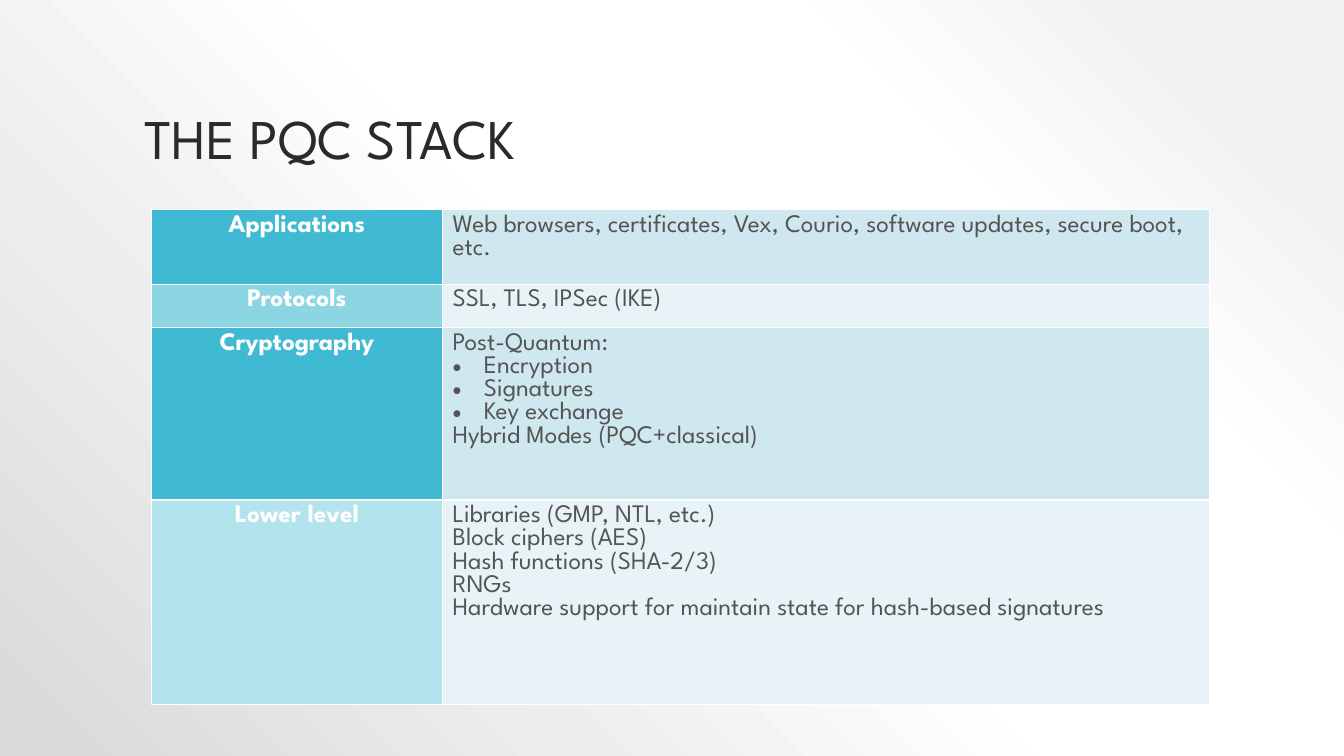
"""Build the slide that lists the layers of the PQC stack in a table."""
from pptx import Presentation
from pptx import oxml
from pptx.dml.color import RGBColor
from pptx.enum import text
from pptx.oxml import ns
from pptx.util import Inches, Pt

FONT = "League Spartan"
TITLE = "THE PQC STACK"
BULLET = "• "
LAYERS = [
    ("Applications", 0.74, "40BAD2", "CFE7EE", [
        "Web browsers, certificates, Vex, Courio, software updates, secure boot, etc.",
    ]),
    ("Protocols", 0.43, "8CD6E4", "E8F3F7", ["SSL, TLS, IPSec (IKE)"]),
    ("Cryptography", 1.71, "40BAD2", "CFE7EE", [
        "Post-Quantum:",
        "• Encryption",
        "• Signatures",
        "• Key exchange",
        "Hybrid Modes (PQC+classical)",
    ]),
    ("Lower level", 2.03, "B3E3ED", "E8F3F7", [
        "Libraries (GMP, NTL, etc.)",
        "Block ciphers (AES)",
        "Hash functions (SHA-2/3)",
        "RNGs",
        "Hardware support for maintain state for hash-based signatures",
    ]),
]
COLUMN_WIDTHS = (2.89, 7.61)
GRADIENT_STOPS = [(10, "F2F2F2"), (28, "FFFFFF"), (48, "FFFFFF"), (100, "D9D9D9")]


def color(value):
    return RGBColor.from_string(value)


def set_font(paragraph, size, value, bold=False):
    font = paragraph.font
    font.name, font.size, font.bold = FONT, Pt(size), bold
    font.color.rgb = color(value)


def set_background(slide):
    stops = "".join(
        f'<a:gs pos="{position * 1000}"><a:srgbClr val="{value}"/></a:gs>'
        for position, value in GRADIENT_STOPS
    )
    background = oxml.parse_xml(
        f'<p:bg {ns.nsdecls("p", "a")}><p:bgPr><a:gradFill><a:gsLst>{stops}</a:gsLst>'
        '<a:path path="circle"><a:fillToRect l="100000" b="100000"/></a:path>'
        "</a:gradFill><a:effectLst/></p:bgPr></p:bg>"
    )
    slide.element.cSld.insert(0, background)


def set_borders(cell):
    properties = cell._tc.get_or_add_tcPr()
    for index, side in enumerate("LRTB"):
        properties.insert(index, oxml.parse_xml(
            f'<a:ln{side} {ns.nsdecls("a")} w="12700"><a:solidFill>'
            f'<a:srgbClr val="FFFFFF"/></a:solidFill></a:ln{side}>'
        ))


def add_bullet(paragraph):
    properties = paragraph._p.get_or_add_pPr()
    indent = Inches(0.31)
    properties.set("marL", str(indent))
    properties.set("indent", str(-indent))
    properties.append(oxml.parse_xml(
        f'<a:buFont {ns.nsdecls("a")} typeface="Arial"/>'))
    properties.append(oxml.parse_xml(
        f'<a:buChar {ns.nsdecls("a")} char="{BULLET.strip()}"/>'))


def fill_cell(cell, lines, fill, value, bold=False, align=text.PP_ALIGN.LEFT):
    cell.fill.solid()
    cell.fill.fore_color.rgb = color(fill)
    set_borders(cell)
    frame = cell.text_frame
    frame.text = "\n".join(line.removeprefix(BULLET) for line in lines)
    for line, paragraph in zip(lines, frame.paragraphs):
        paragraph.alignment = align
        set_font(paragraph, 18, value, bold)
        if line.startswith(BULLET):
            add_bullet(paragraph)


def add_title(slide):
    title = slide.shapes.title
    title.left, title.top = Inches(1.33), Inches(0.3)
    title.width, title.height = Inches(10.67), Inches(1.45)
    frame = title.text_frame
    frame.text = TITLE
    frame.auto_size = text.MSO_AUTO_SIZE.NONE
    frame.vertical_anchor = text.MSO_ANCHOR.BOTTOM
    paragraph = frame.paragraphs[0]
    paragraph.alignment = text.PP_ALIGN.LEFT
    paragraph.line_spacing = 0.9
    set_font(paragraph, 40, "2A2A2A")


def add_stack(slide):
    height = sum(layer[1] for layer in LAYERS)
    table = slide.shapes.add_table(
        len(LAYERS), len(COLUMN_WIDTHS), Inches(1.5), Inches(2.08),
        Inches(sum(COLUMN_WIDTHS)), Inches(height),
    ).table
    table.first_row = table.horz_banding = False
    for column, width in zip(table.columns, COLUMN_WIDTHS):
        column.width = Inches(width)
    for row, (name, row_height, name_fill, detail_fill, details) in zip(table.rows, LAYERS):
        row.height = Inches(row_height)
        name_cell, detail_cell = row.cells
        fill_cell(name_cell, [name], name_fill, "FFFFFF", True, text.PP_ALIGN.CENTER)
        fill_cell(detail_cell, details, detail_fill, "545454")


def main():
    presentation = Presentation()
    presentation.slide_width, presentation.slide_height = Inches(13.33), Inches(7.5)
    slide = presentation.slides.add_slide(presentation.slide_layouts[5])
    set_background(slide)
    add_title(slide)
    add_stack(slide)
    presentation.save("out.pptx")


if __name__ == "__main__":
    main()
